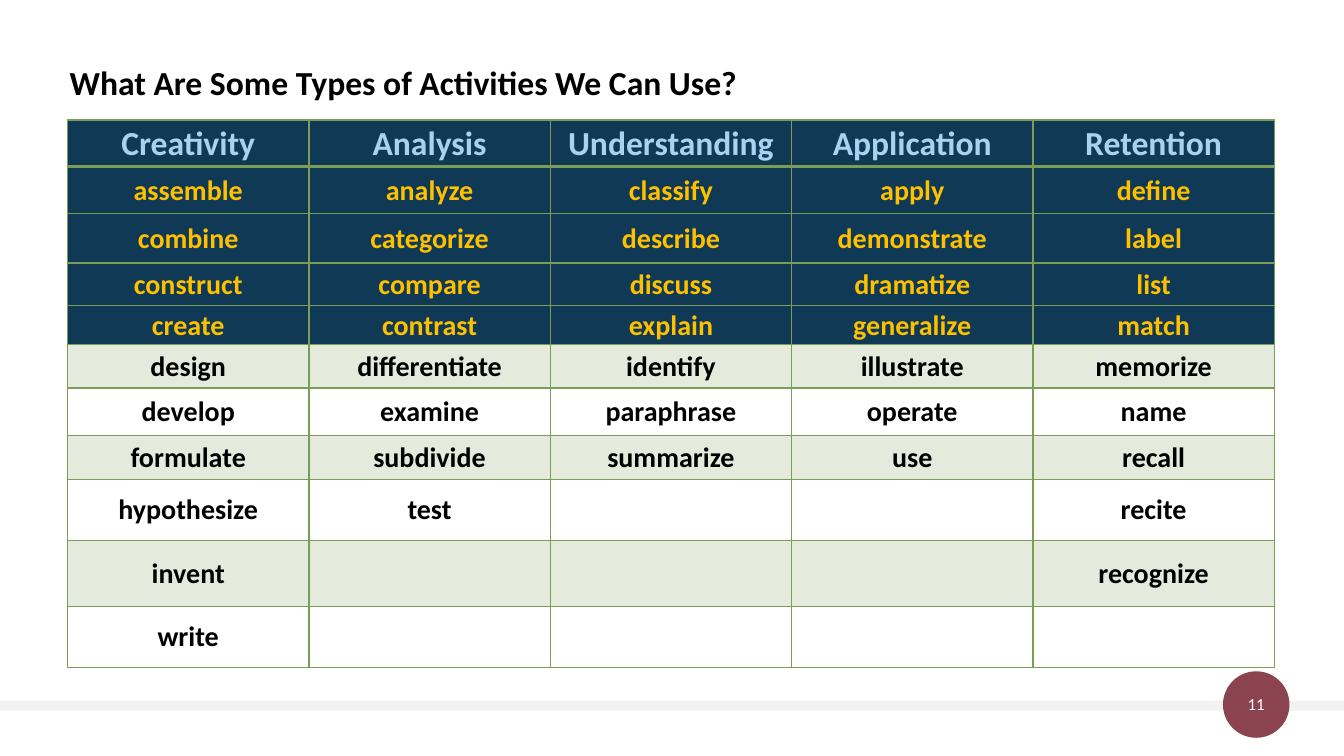
from pptx import Presentation
from pptx.dml.color import RGBColor
from pptx.enum.shapes import MSO_SHAPE as Shape
from pptx.enum.text import MSO_ANCHOR as Anchor, PP_ALIGN as Align
from pptx.oxml.ns import qn
from pptx.util import Inches, Pt
from lxml.etree import SubElement

FONT = "Calibri"
NAVY, GREEN, SKY, GOLD = "0F3955", "7A9E56", "A8D3F0", "FFC000"
BLACK, WHITE, GRAY, MAROON = "000000", "FFFFFF", "F2F2F2", "8A434F"

ACTIVITIES = {
    "Creativity": ["assemble", "combine", "construct", "create", "design",
                   "develop", "formulate", "hypothesize", "invent", "write"],
    "Analysis": ["analyze", "categorize", "compare", "contrast",
                 "differentiate", "examine", "subdivide", "test"],
    "Understanding": ["classify", "describe", "discuss", "explain",
                      "identify", "paraphrase", "summarize"],
    "Application": ["apply", "demonstrate", "dramatize", "generalize",
                    "illustrate", "operate", "use"],
    "Retention": ["define", "label", "list", "match", "memorize", "name",
                  "recall", "recite", "recognize"],
}
ROW_HEIGHTS = [0.46, 0.47, 0.49, 0.42, 0.39, 0.43, 0.47, 0.44, 0.6, 0.66, 0.6]
COLUMN_WIDTH = 2.394
LAST_NAVY_ROW = 4


def rgb(color):
    return RGBColor.from_string(color)


def add_run(paragraph, words, size, color, bold=False):
    run = paragraph.add_run()
    run.text = words
    run.font.name = FONT
    run.font.size = Pt(size)
    run.font.bold = bold
    run.font.color.rgb = rgb(color)


def add_plain_shape(slide, kind, box, color):
    shape = slide.shapes.add_shape(kind, *map(Inches, box))
    shape.shadow.inherit = False
    shape.fill.solid()
    shape.fill.fore_color.rgb = rgb(color)
    shape.line.fill.background()


def add_text(slide, box, insets, anchor):
    frame = slide.shapes.add_textbox(*map(Inches, box)).text_frame
    frame.word_wrap = True
    frame.vertical_anchor = anchor
    (frame.margin_left, frame.margin_top,
     frame.margin_right, frame.margin_bottom) = map(Inches, insets)
    return frame.paragraphs[0]


def set_borders(cell, bottom_width):
    properties = cell._tc.get_or_add_tcPr()
    for side in "LRTB":
        width = bottom_width if side == "B" else 1
        line = SubElement(properties, qn(f"a:ln{side}"), w=str(Pt(width)))
        fill = SubElement(line, qn("a:solidFill"))
        SubElement(fill, qn("a:srgbClr"), val=GREEN)


def fill_cell(cell, row):
    if row > LAST_NAVY_ROW and row % 2 == 0:
        cell.fill.background()
        return
    cell.fill.solid()
    cell.fill.fore_color.rgb = rgb(NAVY if row <= LAST_NAVY_ROW else GREEN)
    if row > LAST_NAVY_ROW:
        tint = cell._tc.tcPr.find(f"{qn('a:solidFill')}/{qn('a:srgbClr')}")
        SubElement(tint, qn("a:alpha"), val="20000")


def write_cell(cell, row, word):
    cell.vertical_anchor = Anchor.MIDDLE
    cell.margin_left = cell.margin_right = cell.margin_top = Inches(0.01)
    cell.margin_bottom = 0
    paragraph = cell.text_frame.paragraphs[0]
    paragraph.alignment = Align.CENTER
    if row == 0:
        add_run(paragraph, word, 24, SKY, bold=True)
    else:
        color = GOLD if row <= LAST_NAVY_ROW else BLACK
        add_run(paragraph, word, 20, color, bold=True)


def add_activity_table(slide):
    columns = [[heading, *verbs] for heading, verbs in ACTIVITIES.items()]
    table = slide.shapes.add_table(
        len(ROW_HEIGHTS), len(columns), Inches(0.67), Inches(1.19),
        Inches(COLUMN_WIDTH * len(columns)), Inches(sum(ROW_HEIGHTS))).table
    table.horz_banding = False
    for row, height in enumerate(ROW_HEIGHTS):
        table.rows[row].height = Inches(height)
    for column, words in enumerate(columns):
        table.columns[column].width = Inches(COLUMN_WIDTH)
        for row in range(len(ROW_HEIGHTS)):
            cell = table.cell(row, column)
            set_borders(cell, 2 if row == 0 else 1)
            fill_cell(cell, row)
            if row < len(words):
                write_cell(cell, row, words[row])


def main():
    deck = Presentation()
    deck.slide_width, deck.slide_height = Inches(13.33), Inches(7.5)
    slide = deck.slides.add_slide(deck.slide_layouts[6])

    # Footer band and page number
    add_plain_shape(slide, Shape.RECTANGLE, (0, 6.95, 13.33, 0.1), GRAY)
    add_plain_shape(slide, Shape.OVAL, (12.13, 6.66, 0.66, 0.66), MAROON)
    page_number = add_text(slide, (12.13, 6.77, 0.66, 0.43),
                           (0, 0, 0, 0), Anchor.MIDDLE)
    page_number.alignment = Align.CENTER
    add_run(page_number, "11", 12, WHITE)

    # Title
    title = add_text(slide, (0.69, 0.61, 11.83, 0.91),
                     (0, 0.05, 0.1, 0.05), Anchor.TOP)
    title.line_spacing = 0.9
    add_run(title, "What Are Some Types of Activities We Can Use?",
            24, BLACK, bold=True)

    # Verbs by kind of activity
    add_activity_table(slide)

    deck.save("out.pptx")


if __name__ == "__main__":
    main()
